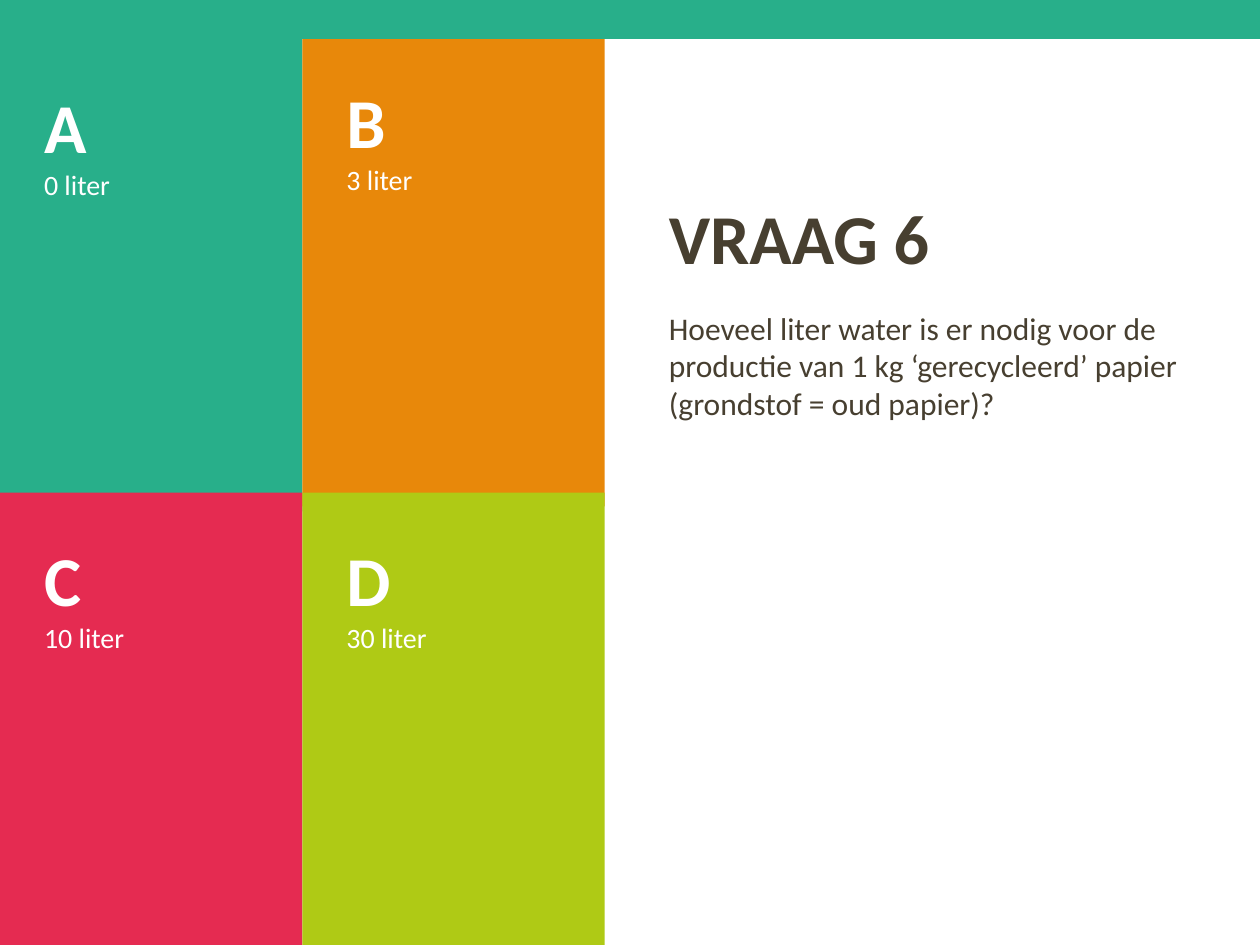
"""Build a quiz slide with four coloured answer tiles and a question."""
from pptx import Presentation
from pptx.dml.color import RGBColor
from pptx.enum.shapes import MSO_SHAPE as Preset
from pptx.enum.text import MSO_ANCHOR as Anchor, PP_ALIGN as Align
from pptx.util import Inches, Pt

GREEN = RGBColor(0x28, 0xAF, 0x8A)
ORANGE = RGBColor(0xE8, 0x88, 0x0A)
RED = RGBColor(0xE5, 0x2B, 0x51)
LIME = RGBColor(0xAF, 0xCA, 0x15)
WHITE = RGBColor(0xFF, 0xFF, 0xFF)
BROWN = RGBColor(0x47, 0x3F, 0x30)

FONT = "Calibri"
TITLE = "VRAAG 6"
QUESTION = ("Hoeveel liter water is er nodig voor de productie van 1 kg "
            "‘gerecycleerd’ papier (grondstof = oud papier)?")
ANSWERS = [
    ("A", "0 liter", GREEN, 0.31, 3.75),
    ("B", "3 liter", ORANGE, 0.27, 3.75),
    ("C", "10 liter", RED, 3.91, 3.59),
    ("D", "30 liter", LIME, 3.91, 3.59),
]
COLUMNS = 2
TILE_WIDTH = 2.4
TILE_INSET = 0.35
QUESTION_LEFT, QUESTION_WIDTH = 5.21, 4.28


def write_text(paragraph, text, size, color, bold=False):
    run = paragraph.add_run()
    run.text = text
    run.font.name = FONT
    run.font.size = Pt(size)
    run.font.bold = bold
    run.font.color.rgb = color
    paragraph.alignment = Align.LEFT


def add_rectangle(slide, left, top, width, height, color):
    shape = slide.shapes.add_shape(
        Preset.RECTANGLE, Inches(left), Inches(top), Inches(width), Inches(height))
    shape.shadow.inherit = False
    shape.fill.solid()
    shape.fill.fore_color.rgb = color
    shape.line.fill.background()
    return shape


def add_tile(slide, index, letter, answer, color, top, height):
    left = index % COLUMNS * TILE_WIDTH
    frame = add_rectangle(slide, left, top, TILE_WIDTH, height, color).text_frame
    frame.word_wrap = True
    frame.vertical_anchor = Anchor.TOP
    frame.margin_left = frame.margin_right = Inches(TILE_INSET)
    frame.margin_top = frame.margin_bottom = Inches(TILE_INSET)
    write_text(frame.paragraphs[0], letter, size=40, color=WHITE, bold=True)
    write_text(frame.add_paragraph(), answer, size=16, color=WHITE)


def add_question_text(slide, text, top, height, anchor, **text_format):
    box = slide.shapes.add_textbox(
        Inches(QUESTION_LEFT), Inches(top), Inches(QUESTION_WIDTH), Inches(height))
    box.text_frame.word_wrap = True
    box.text_frame.vertical_anchor = anchor
    write_text(box.text_frame.paragraphs[0], text, color=BROWN, **text_format)


def main():
    presentation = Presentation()
    presentation.slide_width = Inches(10)
    presentation.slide_height = Inches(7.5)
    slide = presentation.slides.add_slide(presentation.slide_layouts[6])
    add_question_text(slide, TITLE, 1.31, 0.95, Anchor.BOTTOM, size=40, bold=True)
    add_question_text(slide, QUESTION, 2.4, 2.49, Anchor.TOP, size=18)
    for index, answer in enumerate(ANSWERS):
        add_tile(slide, index, *answer)
    add_rectangle(slide, 0, 0, 10.03, 0.31, GREEN)
    presentation.save("out.pptx")


if __name__ == "__main__":
    main()
